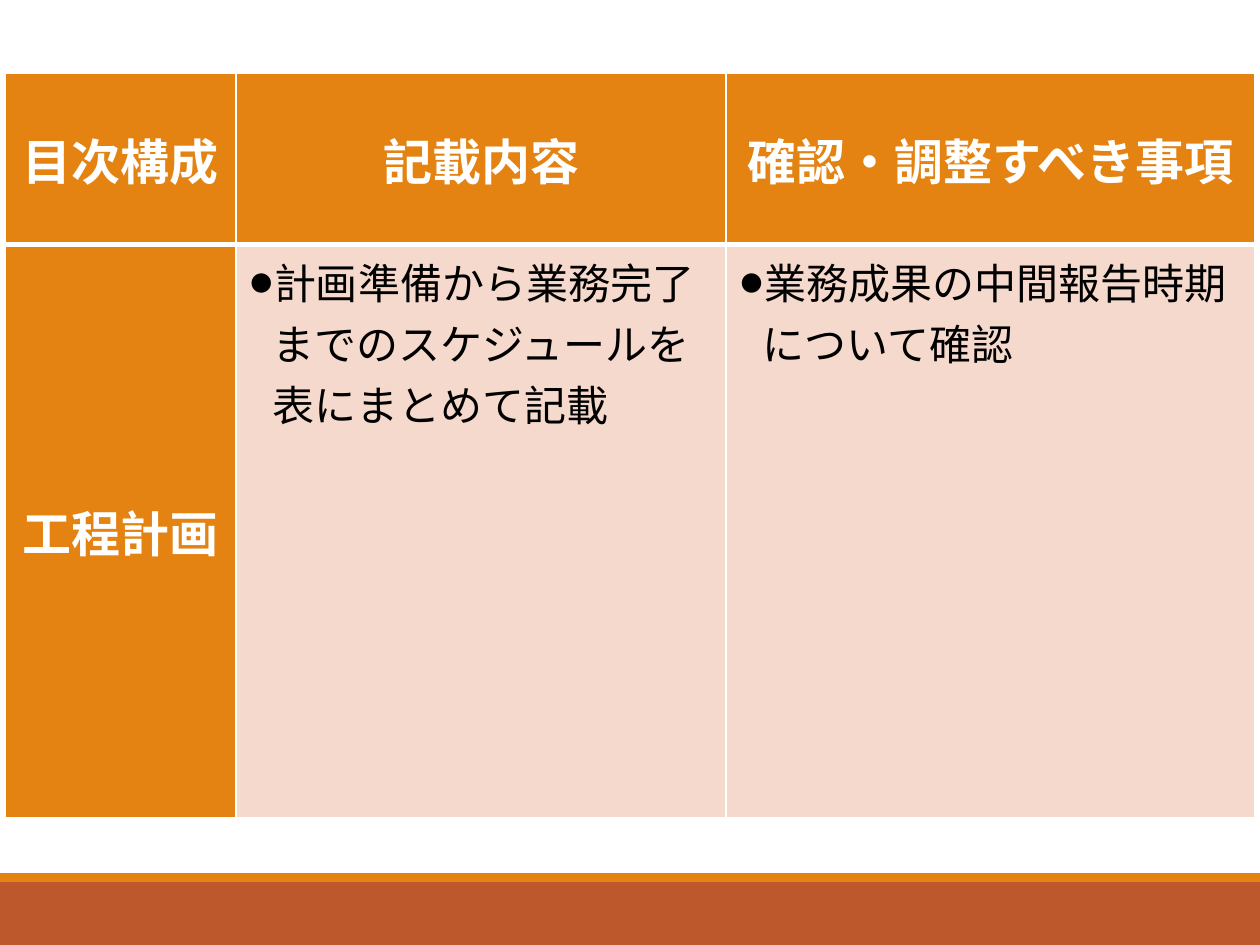
from lxml.etree import SubElement
from pptx import Presentation
from pptx.dml.color import RGBColor as Rgb
from pptx.enum.shapes import MSO_SHAPE as Kind
from pptx.enum.text import MSO_ANCHOR as Anchor, PP_ALIGN as Align
from pptx.oxml import parse_xml
from pptx.oxml.ns import nsdecls, qn
from pptx.util import Cm, Pt

HUE = {"head": "E48312", "cell": "F5D9CC", "foot": "BD582C",
       "white": "FFFFFF", "black": "000000"}
HEAD = {"size": Pt(28), "bold": True, "name": "Calibri"}
BODY = {"size": Pt(24), "bold": False, "name": "Calibri"}
ROWS = [
    ["目次構成", "記載内容", "確認・調整すべき事項"],
    ["工程計画", "計画準備から業務完了までのスケジュールを表にまとめて記載",
     "業務成果の中間報告時期について確認"],
]


def tint(fill, hue):
    """Give a fill one solid colour."""
    fill.solid()
    fill.fore_color.rgb = Rgb.from_string(HUE[hue])


def edge(cell, top, base):
    """Draw white borders round a cell, with widths in points."""
    sides = {"lnL": 1, "lnR": 1, "lnT": top, "lnB": base}
    props = cell._tc.get_or_add_tcPr()
    for spot, (side, width) in enumerate(sides.items()):
        props.insert(spot, parse_xml(
            f'<a:{side} {nsdecls("a")} w="{Pt(width)}"><a:solidFill>'
            f'<a:srgbClr val="{HUE["white"]}"/></a:solidFill></a:{side}>'))


def bullet(para):
    """Hang a paragraph on a round bullet."""
    props = para._p.get_or_add_pPr()
    props.set("marL", str(Cm(0.48)))
    props.set("indent", str(-Cm(0.48)))
    SubElement(props, qn("a:buFont"), typeface="Calibri")
    SubElement(props, qn("a:buChar"), char="●")


def write(cell, text, title):
    """Fill a cell as a heading or as a bulleted item."""
    tint(cell.fill, "head" if title else "cell")
    para = cell.text_frame.paragraphs[0]
    if title:
        cell.vertical_anchor = Anchor.MIDDLE
        para.alignment = Align.CENTER
    else:
        bullet(para)
    run = para.add_run()
    run.text = text
    for key, value in (HEAD if title else BODY).items():
        setattr(run.font, key, value)
    run.font.color.rgb = Rgb.from_string(HUE["white" if title else "black"])


def plan(slide, left, top, wide, high):
    """Place the plan table in the given box."""
    table = slide.shapes.add_table(
        2, 3, Cm(left), Cm(top), Cm(wide), Cm(high)).table
    cols = [4.65, 9.88]
    for col, width in zip(table.columns, cols + [wide - sum(cols)]):
        col.width = Cm(width)
    for row, height in zip(table.rows, [3.45, high - 3.45]):
        row.height = Cm(height)
    for r, texts in enumerate(ROWS):
        for c, text in enumerate(texts):
            cell = table.cell(r, c)
            write(cell, text, r == 0 or c == 0)
            edge(cell, 3 if r else 1, 1 if r else 3)


def footer(slide, left, top, wide, high):
    """Place a thin stripe over a thick band in the given box."""
    thin = 0.18
    bands = [("foot", top + thin, high - thin), ("head", top, thin)]
    for hue, start, tall in bands:
        band = slide.shapes.add_shape(
            Kind.RECTANGLE, Cm(left), Cm(start), Cm(wide), Cm(tall))
        band.shadow.inherit = False
        band.line.fill.background()
        tint(band.fill, hue)


def main():
    """Build and save the slide."""
    deck = Presentation()
    deck.slide_width, deck.slide_height = Cm(25.4), Cm(19.05)
    slide = deck.slides.add_slide(deck.slide_layouts[6])
    tint(slide.background.fill, "white")
    footer(slide, 0, 17.6, 25.4, 1.45)
    plan(slide, 0.11, 1.48, 25.18, 15.01)
    deck.save("out.pptx")


if __name__ == "__main__":
    main()
